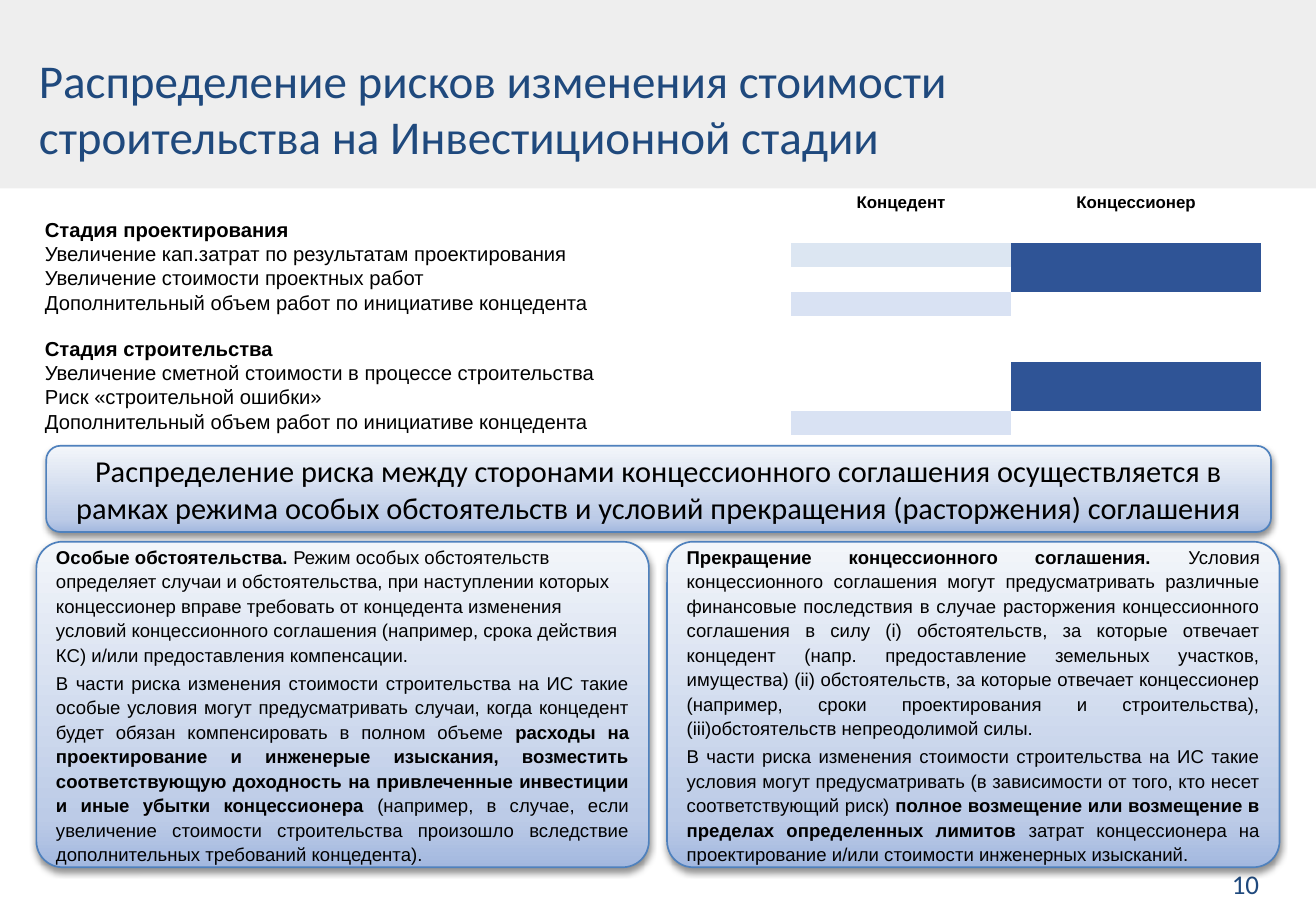
from lxml.etree import SubElement
from pptx import Presentation
from pptx.dml.color import RGBColor
from pptx.enum.shapes import MSO_SHAPE as Form
from pptx.enum.text import MSO_ANCHOR as Anchor, MSO_AUTO_SIZE as Auto, PP_ALIGN as Align
from pptx.oxml import parse_xml
from pptx.oxml.ns import nsdecls, qn
from pptx.util import Inches, Pt

NAVY = RGBColor(0x1F, 0x49, 0x7D)
BLUE = RGBColor(0x2F, 0x54, 0x96)
PALE = RGBColor(0xD9, 0xE2, 0xF3)
ICE = RGBColor(0xDC, 0xE6, 0xF2)
EDGE = RGBColor(0x4F, 0x81, 0xBD)
GREY = RGBColor(0xEE, 0xEE, 0xEE)
WHITE = RGBColor(0xFF, 0xFF, 0xFF)
BLACK = RGBColor(0, 0, 0)

STOPS = [(0, "A3B8DF"), (15, "BCCBE7"), (100, "F3F6FA")]
NO_GRID = "{2D5ABB26-0587-4C30-8999-92F81FD0307C}"

HEAD = {"name": "Calibri", "size": Pt(27.9)}
NOTE = {"name": "Calibri", "size": Pt(18)}
PAGE = {"name": "Calibri", "size": Pt(16)}
BODY = {"name": "Arial", "size": Pt(11)}
CELL = {"name": "Arial", "size": Pt(12)}
LABEL = {"name": "Arial", "size": Pt(10)}
LEFT = {"line_spacing": 1.1, "space_after": Pt(2), "alignment": Align.LEFT}
JUST = {**LEFT, "alignment": Align.JUSTIFY}
MID = {"alignment": Align.CENTER}

COLS = [5.54, 0.67, 1.81, 2.06]
EXTRA = "Дополнительный объем работ по инициативе концедента"
RISKS = [
    ("Стадия проектирования", True, WHITE, WHITE),
    ("Увеличение кап.затрат по результатам проектирования", False, ICE, BLUE),
    ("Увеличение стоимости проектных работ", False, WHITE, BLUE),
    (EXTRA, False, PALE, WHITE),
    ("", False, WHITE, WHITE),
    ("Стадия строительства", True, WHITE, WHITE),
    ("Увеличение сметной стоимости в процессе строительства", False, WHITE, BLUE),
    ("Риск «строительной ошибки»", False, WHITE, BLUE),
    (EXTRA, False, PALE, WHITE),
]

TITLE = "Распределение рисков изменения стоимости строительства на Инвестиционной стадии"
RULE = ("Распределение риска между сторонами концессионного соглашения осуществляется в рамках "
        "режима особых обстоятельств и условий прекращения (расторжения) соглашения")
EVENTS = [
    (LEFT, [
        ("Особые обстоятельства. ", True),
        ("Режим особых обстоятельств определяет случаи и обстоятельства, при наступлении которых "
         "концессионер вправе требовать от концедента изменения условий концессионного соглашения "
         "(например, срока действия КС) и/или предоставления компенсации.", False)]),
    (JUST, [
        ("В части риска изменения стоимости строительства на ИС такие особые условия могут "
         "предусматривать случаи, когда концедент будет обязан компенсировать в полном объеме ", False),
        ("расходы на проектирование и инженерые изыскания, возместить соответствующую доходность "
         "на привлеченные инвестиции и иные убытки концессионера ", True),
        ("(например, в случае, если увеличение стоимости строительства произошло вследствие "
         "дополнительных требований концедента).", False)]),
]
ENDING = [
    (JUST, [
        ("Прекращение концессионного соглашения. ", True),
        ("Условия концессионного соглашения могут предусматривать различные финансовые последствия "
         "в случае расторжения концессионного соглашения в силу (i) обстоятельств, за которые "
         "отвечает концедент (напр. предоставление земельных участков, имущества) "
         "(ii) обстоятельств, за которые отвечает концессионер (например, сроки проектирования "
         "и строительства), (iii)обстоятельств непреодолимой силы.", False)]),
    (JUST, [
        ("В части риска изменения стоимости строительства на ИС такие условия могут предусматривать "
         "(в зависимости от того, кто несет соответствующий риск) ", False),
        ("полное возмещение или возмещение в пределах определенных лимитов", True),
        (" затрат концессионера на проектирование и/или стоимости инженерных изысканий.", False)]),
]


def apply(item, look):
    """Set each format value of look on item."""
    for key, value in look.items():
        setattr(item, key, value)


def write(frame, paras, look, color=BLACK):
    """Fill a text frame with paragraphs of plain and bold runs."""
    frame.word_wrap = True
    for num, (form, runs) in enumerate(paras):
        para = frame.add_paragraph() if num else frame.paragraphs[0]
        apply(para, form)
        for text, bold in runs:
            run = para.add_run()
            run.text = text
            apply(run.font, {**look, "bold": bold})
            run.font.color.rgb = color


def add_title(slide):
    """Place the slide title."""
    title = slide.shapes.title
    apply(title, {"left": Inches(0.22), "top": Inches(0.67),
                  "width": Inches(10.08), "height": Inches(0.73)})
    apply(title.text_frame, {"auto_size": Auto.NONE, "vertical_anchor": Anchor.BOTTOM})
    write(title.text_frame, [({"alignment": Align.LEFT}, [(TITLE, False)])], HEAD, NAVY)


def add_sheet(slide):
    """Add the white area under the title band."""
    sheet = slide.shapes.add_shape(Form.RECTANGLE, 0, Inches(1.55), Inches(10.83), Inches(5.95))
    sheet.shadow.inherit = False
    sheet.fill.solid()
    sheet.fill.fore_color.rgb = WHITE
    sheet.line.fill.background()


def add_panel(slide, box, paras, look, bend=None):
    """Add a rounded panel with gradient, shadow and text."""
    panel = slide.shapes.add_shape(Form.ROUNDED_RECTANGLE, *map(Inches, box))
    if bend:
        panel.adjustments[0] = bend
    props = panel._element.spPr
    stops = "".join(f'<a:gs pos="{pos * 1000}"><a:srgbClr val="{tone}"/></a:gs>'
                    for pos, tone in STOPS)
    props.append(parse_xml(
        f'<a:gradFill {nsdecls("a")} rotWithShape="1"><a:gsLst>{stops}</a:gsLst>'
        '<a:lin ang="16200000" scaled="0"/></a:gradFill>'))
    panel.line.color.rgb = EDGE
    panel.line.width = Pt(1)
    props.append(parse_xml(
        f'<a:effectLst {nsdecls("a")}><a:outerShdw blurRad="{Pt(4)}" dist="{Pt(2)}" '
        'dir="5400000" rotWithShape="0"><a:srgbClr val="000000"><a:alpha val="43000"/>'
        '</a:srgbClr></a:outerShdw></a:effectLst>'))
    panel.text_frame.vertical_anchor = Anchor.MIDDLE
    write(panel.text_frame, paras, look)


def fill_cell(cell, text, look, bold, tone, form):
    """Set the fill, margins and text of one cell."""
    apply(cell, {"margin_left": Inches(0.07), "margin_right": Inches(0.07),
                 "margin_top": 0, "margin_bottom": 0})
    cell.fill.solid()
    cell.fill.fore_color.rgb = tone
    if text:
        write(cell.text_frame, [(form, [(text, bold)])], look)
    else:
        para = cell.text_frame.paragraphs[0]._p
        SubElement(para, qn("a:endParaRPr"), sz="1000")


def add_risks(slide):
    """Add the table of risks by party."""
    count = len(RISKS) + 1
    table = slide.shapes.add_table(count, len(COLS), Inches(0.3), Inches(1.59),
                                   Inches(sum(COLS)), Inches(0.18 * count)).table
    apply(table, {"first_row": False, "horz_banding": False})
    table._tbl.tblPr.find(qn("a:tableStyleId")).text = NO_GRID
    for col, wide in zip(table.columns, COLS):
        col.width = Inches(wide)
    table.rows[0].height = Inches(0.21)
    for cell, text in zip(table.rows[0].cells, ["", "", "Концедент", "Концессионер"]):
        fill_cell(cell, text, LABEL, True, WHITE, MID)
    for num, (risk, bold, owner, firm) in enumerate(RISKS, 1):
        tones = [WHITE, WHITE, owner, firm]
        for cell, text, tone in zip(table.rows[num].cells, [risk, "", "", ""], tones):
            fill_cell(cell, text, CELL, bold, tone, {})


def add_page(slide):
    """Add the page number."""
    page = slide.shapes.add_textbox(Inches(7.93), Inches(7.09), Inches(2.53), Inches(0.52))
    write(page.text_frame, [({"alignment": Align.RIGHT}, [("10", False)])], PAGE, NAVY)


def main():
    """Build and save the slide."""
    deck = Presentation()
    apply(deck, {"slide_width": Inches(10.83), "slide_height": Inches(7.5)})
    slide = deck.slides.add_slide(deck.slide_layouts[5])
    slide.background.fill.solid()
    slide.background.fill.fore_color.rgb = GREY
    add_sheet(slide)
    add_title(slide)
    add_page(slide)
    add_risks(slide)
    add_panel(slide, (0.38, 3.67, 10.08, 0.71), [(MID, [(RULE, False)])], NOTE)
    for left, paras in [(0.3, EVENTS), (5.49, ENDING)]:
        add_panel(slide, (left, 4.46, 5.04, 2.68), paras, BODY, 0.08)
    deck.save("out.pptx")


if __name__ == "__main__":
    main()
